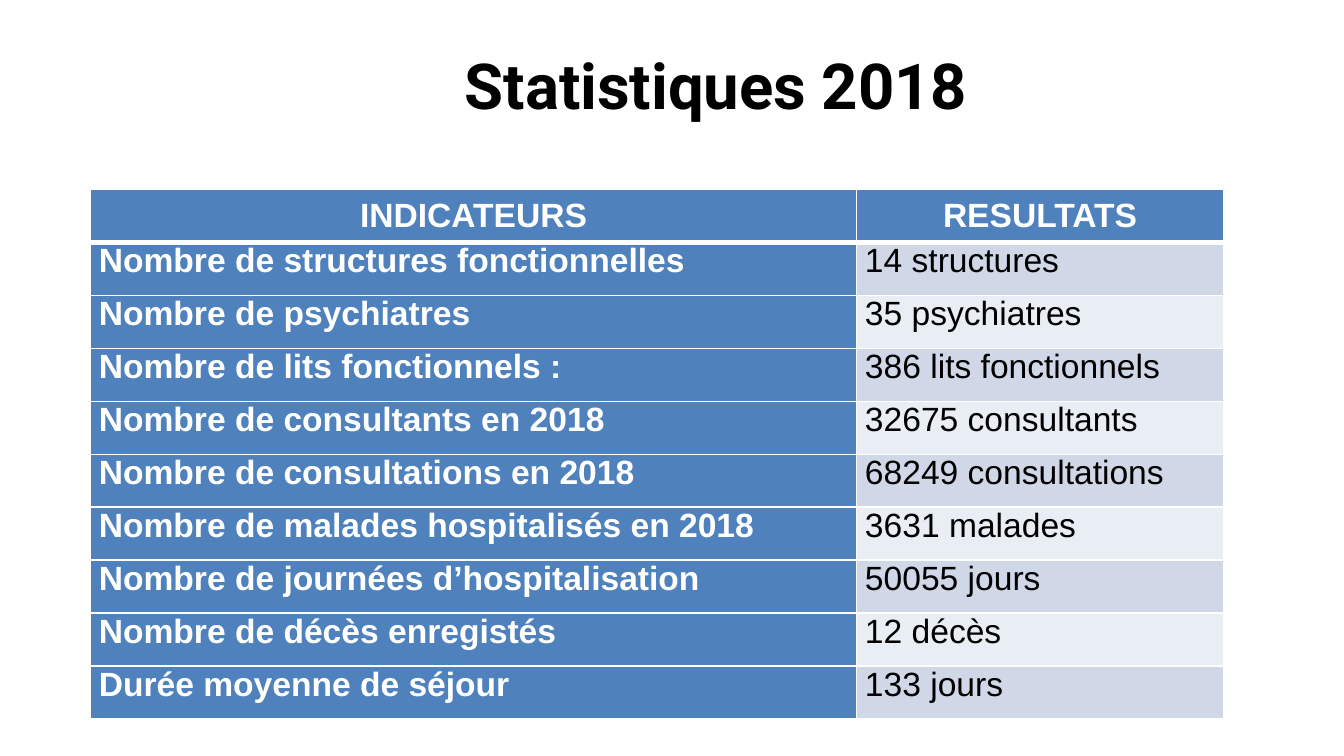
from dataclasses import dataclass

from lxml.etree import SubElement
from pptx import Presentation
from pptx.dml.color import RGBColor
from pptx.enum.text import MSO_ANCHOR, MSO_AUTO_SIZE, PP_ALIGN
from pptx.oxml.ns import qn
from pptx.util import Pt


@dataclass(frozen=True)
class Theme:
    title_font: str = "Roboto"
    table_font: str = "Arial"
    title_size: int = 34
    table_size: int = 18
    black: str = "000000"
    white: str = "FFFFFF"
    blue: str = "4F81BD"
    bands: tuple = ("D0D8E8", "E9EDF4")
    thin_line: int = 1
    thick_line: int = 3


HEADER = ("INDICATEURS", "RESULTATS")
STATISTICS = [
    ("Nombre de structures fonctionnelles", "14 structures"),
    ("Nombre de psychiatres", "35 psychiatres"),
    ("Nombre de lits fonctionnels :", "386 lits fonctionnels"),
    ("Nombre de consultants en 2018", "32675 consultants"),
    ("Nombre de consultations en 2018", "68249 consultations"),
    ("Nombre de malades hospitalisés en 2018", "3631 malades"),
    ("Nombre de journées d’hospitalisation", "50055 jours"),
    ("Nombre de décès enregistés", "12 décès"),
    ("Durée moyenne de séjour", "133 jours"),
]


class SlideBuilder:
    def __init__(self, slide, theme):
        self.slide = slide
        self.theme = theme

    def format_text(self, paragraph, font, size, color, bold, align):
        paragraph.alignment = align
        for run in paragraph.runs:
            run.font.name = font
            run.font.size = Pt(size)
            run.font.bold = bold
            run.font.color.rgb = RGBColor.from_string(color)

    def add_title(self, text, left, top, width, height):
        title = self.slide.shapes.title
        title.left, title.top = Pt(left), Pt(top)
        title.width, title.height = Pt(width), Pt(height)
        text_frame = title.text_frame
        text_frame.text = text
        text_frame.auto_size = MSO_AUTO_SIZE.NONE
        text_frame.vertical_anchor = MSO_ANCHOR.MIDDLE
        self.format_text(text_frame.paragraphs[0], self.theme.title_font,
                         self.theme.title_size, self.theme.black, True,
                         PP_ALIGN.CENTER)

    def add_borders(self, cell, top, bottom):
        properties = cell._tc.get_or_add_tcPr()
        thin = self.theme.thin_line
        for side, width in zip("LRTB", (thin, thin, top, bottom)):
            line = SubElement(properties, qn(f"a:ln{side}"), w=str(Pt(width)))
            fill = SubElement(line, qn("a:solidFill"))
            SubElement(fill, qn("a:srgbClr"), val=self.theme.white)

    def fill_cell(self, cell, text, row, column):
        theme = self.theme
        is_header = row == 0
        is_heading = is_header or column == 0
        # Borders come before the fill in the cell properties
        self.add_borders(cell,
                         top=theme.thick_line if row == 1 else theme.thin_line,
                         bottom=theme.thick_line if is_header else theme.thin_line)
        cell.fill.solid()
        cell.fill.fore_color.rgb = RGBColor.from_string(
            theme.blue if is_heading else theme.bands[(row - 1) % 2])
        cell.margin_left = cell.margin_right = Pt(4.5)
        cell.margin_top = cell.margin_bottom = Pt(0)
        cell.vertical_anchor = MSO_ANCHOR.MIDDLE if is_header else MSO_ANCHOR.TOP
        cell.text_frame.text = text
        self.format_text(cell.text_frame.paragraphs[0], theme.table_font,
                         theme.table_size,
                         theme.white if is_heading else theme.black, is_heading,
                         PP_ALIGN.CENTER if is_header else PP_ALIGN.LEFT)

    def add_table(self, rows, left, top, column_widths, row_height):
        table = self.slide.shapes.add_table(
            len(rows), len(column_widths), Pt(left), Pt(top),
            Pt(sum(column_widths)), Pt(row_height * len(rows))).table
        for column, width in zip(table.columns, column_widths):
            column.width = Pt(width)
        for row_index, texts in enumerate(rows):
            table.rows[row_index].height = Pt(row_height)
            for column_index, text in enumerate(texts):
                self.fill_cell(table.cell(row_index, column_index), text,
                               row_index, column_index)


def main():
    presentation = Presentation()
    presentation.slide_width, presentation.slide_height = Pt(720), Pt(405)
    title_only = presentation.slide_layouts[5]
    builder = SlideBuilder(presentation.slides.add_slide(title_only), Theme())

    # Title
    builder.add_title("Statistiques 2018", 87.8, 13.7, 591.8, 62.6)

    # Indicators and their results
    builder.add_table([HEADER, *STATISTICS], left=48.5, top=101.5,
                      column_widths=(410.4, 196.6), row_height=28.4)

    presentation.save("out.pptx")


if __name__ == "__main__":
    main()
